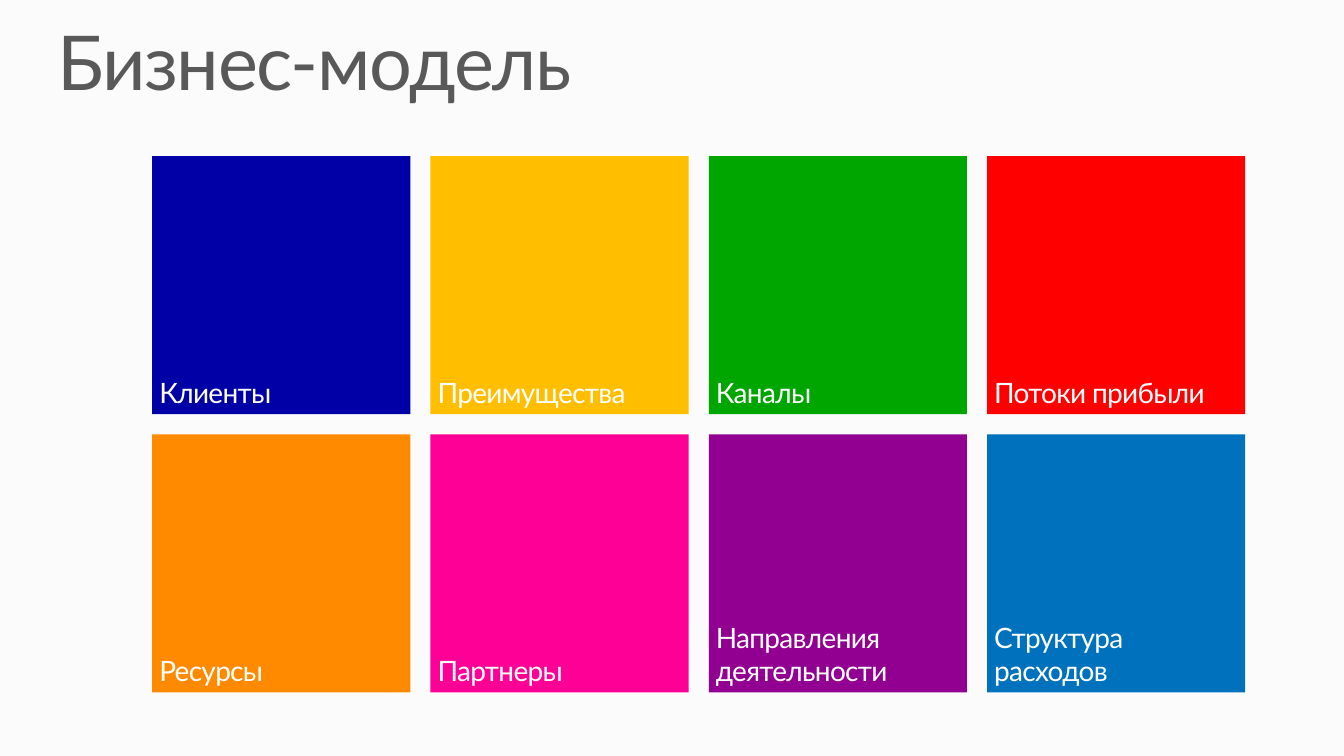
from pptx import Presentation
from pptx.dml.color import RGBColor
from pptx.enum.shapes import MSO_SHAPE as Shape
from pptx.enum.text import MSO_ANCHOR as Anchor, MSO_AUTO_SIZE as AutoSize, PP_ALIGN as Align
from pptx.util import Inches, Pt

HEADING = "Бизнес-модель"
TILES = [
    [("Клиенты", "0000A6"), ("Преимущества", "FFBE00"),
     ("Каналы", "00A600"), ("Потоки прибыли", "FF0000")],
    [("Ресурсы", "FF8A00"), ("Партнеры", "FF0097"),
     ("Направления деятельности", "910091"), ("Структура расходов", "0071BC")],
]
BACKGROUND, HEADING_COLOR, LABEL_COLOR = "FBFBFB", "595959", "FFFFFF"
FONT = "Lato"
LEFT, TOP, SIDE, GAP = 1.51, 1.55, 2.56, 0.2


def paint(fill, color):
    fill.solid()
    fill.fore_color.rgb = RGBColor.from_string(color)


def write(frame, text, size, color, tracking, inset_x=0, inset_y=0):
    frame.word_wrap = True
    frame.margin_left = frame.margin_right = Inches(inset_x)
    frame.margin_top = frame.margin_bottom = Inches(inset_y)
    paragraph = frame.paragraphs[0]
    paragraph.alignment = Align.LEFT
    run = paragraph.add_run()
    run.text = text
    run.font.name = FONT
    run.font.size = Pt(size)
    paint(run.font.fill, color)
    run._r.get_or_add_rPr().set("spc", str(round(tracking * 100)))
    return paragraph


def add_heading(slide):
    heading = slide.shapes.add_textbox(Inches(0.57), Inches(0.25), Inches(12.19), Inches(0.82))
    paragraph = write(heading.text_frame, HEADING, 54, HEADING_COLOR, -1)
    paragraph.line_spacing = 0.9
    heading.text_frame.auto_size = AutoSize.SHAPE_TO_FIT_TEXT


def add_tile(slide, row, column, label, color):
    pitch = SIDE + GAP
    tile = slide.shapes.add_shape(
        Shape.RECTANGLE, Inches(LEFT + column * pitch), Inches(TOP + row * pitch),
        Inches(SIDE), Inches(SIDE))
    tile.shadow.inherit = False
    tile.line.fill.background()
    paint(tile.fill, color)
    tile.text_frame.vertical_anchor = Anchor.BOTTOM
    write(tile.text_frame, label, 20, LABEL_COLOR, -0.5, 0.07, 0.05)


def main():
    deck = Presentation()
    deck.slide_width, deck.slide_height = Inches(13.33), Inches(7.5)
    slide = deck.slides.add_slide(deck.slide_layouts[6])
    paint(slide.background.fill, BACKGROUND)
    add_heading(slide)
    for row, tiles in enumerate(TILES):
        for column, (label, color) in enumerate(tiles):
            add_tile(slide, row, column, label, color)
    deck.save("out.pptx")


if __name__ == "__main__":
    main()
